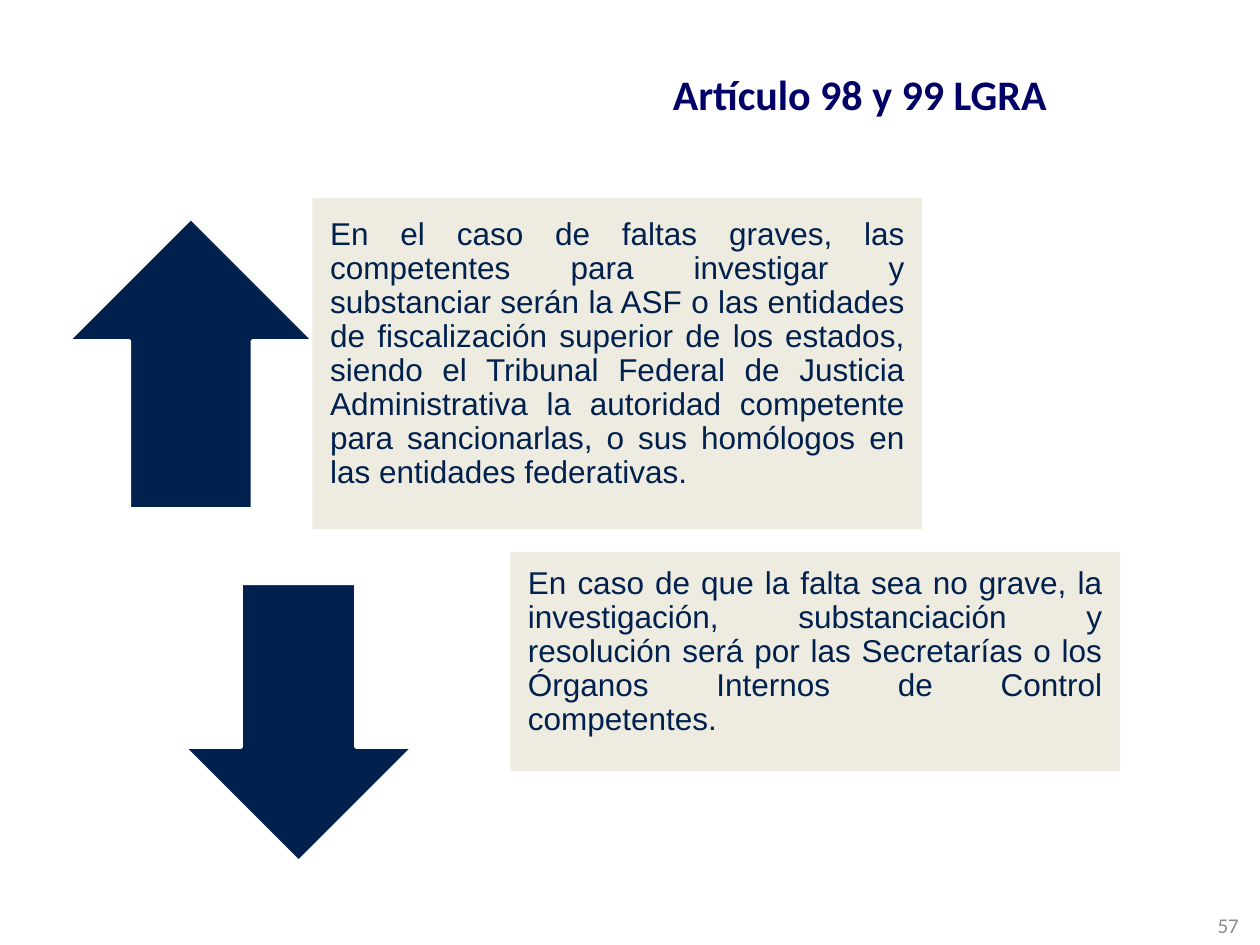
from pptx import Presentation
from pptx import util as u
from pptx.dml import color
from pptx.enum import shapes, text

NAVY = "00204E"


def tint(code):
    return color.RGBColor.from_string(code)


def area(left, top, width, height):
    return [u.Inches(side) for side in (left, top, width, height)]


class Deck:
    """Hold the style and the current slide."""

    def __init__(self):
        self.prs = Presentation()
        self.prs.slide_width = u.Inches(10)
        self.prs.slide_height = u.Inches(7.5)
        self.slide = self.prs.slides.add_slide(self.prs.slide_layouts[5])

    def label(self, frame, words, size, font, hue, align, bold=False):
        para = frame.paragraphs[0]
        para.alignment = align
        run = para.add_run()
        run.text = words
        run.font.size = u.Pt(size)
        run.font.name = font
        run.font.bold = bold
        run.font.color.rgb = tint(hue)
        return para

    def title(self, box, words):
        head = self.slide.shapes.title
        head.left, head.top, head.width, head.height = area(*box)
        frame = head.text_frame
        frame.word_wrap = False
        frame.auto_size = text.MSO_AUTO_SIZE.NONE
        frame.vertical_anchor = text.MSO_ANCHOR.TOP
        self.label(frame, words, 24, "Calibri", "000066", text.PP_ALIGN.LEFT, True)

    def number(self, box, words):
        frame = self.slide.shapes.add_textbox(*area(*box)).text_frame
        frame.word_wrap = True
        frame.vertical_anchor = text.MSO_ANCHOR.MIDDLE
        self.label(frame, words, 12, "Calibri", "8C8C8C", text.PP_ALIGN.RIGHT)

    def shape(self, kind, box, fill):
        item = self.slide.shapes.add_shape(kind, *area(*box))
        item.shadow.inherit = False
        item.fill.solid()
        item.fill.fore_color.rgb = tint(fill)
        return item

    def arrow(self, kind, box):
        line = self.shape(kind, box, NAVY).line
        line.color.rgb = tint("FFFFFF")
        line.width = u.Pt(2)

    def panel(self, box, words):
        item = self.shape(shapes.MSO_SHAPE.RECTANGLE, box, "EEECE1")
        item.line.fill.background()
        frame = item.text_frame
        frame.word_wrap = True
        frame.vertical_anchor = text.MSO_ANCHOR.MIDDLE
        frame.margin_top = 0
        frame.margin_left = frame.margin_right = frame.margin_bottom = u.Inches(0.14)
        para = self.label(frame, words, 18, "Arial", NAVY, text.PP_ALIGN.JUSTIFY)
        para.line_spacing = 0.9

    def save(self):
        self.prs.save("out.pptx")


def main():
    deck = Deck()
    deck.number((8.92, 7.19, 1.01, 0.31), "57")
    deck.arrow(shapes.MSO_SHAPE.UP_ARROW, (0.54, 1.73, 1.95, 2.31))
    deck.panel(
        (2.48, 1.57, 4.84, 2.63),
        "En el caso de faltas graves, las competentes para investigar y "
        "substanciar serán la ASF o las entidades de fiscalización superior "
        "de los estados, siendo el Tribunal Federal de Justicia Administrativa "
        "la autoridad competente para sancionarlas, o sus homólogos en las "
        "entidades federativas.",
    )
    deck.arrow(shapes.MSO_SHAPE.DOWN_ARROW, (1.46, 4.63, 1.82, 2.21))
    deck.panel(
        (4.05, 4.38, 4.84, 1.74),
        "En caso de que la falta sea no grave, la investigación, substanciación "
        "y resolución será por las Secretarías o los Órganos Internos de Control "
        "competentes.",
    )
    deck.title((5.24, 0.49, 3.27, 0.5), "Artículo 98 y 99 LGRA")
    deck.save()


if __name__ == "__main__":
    main()
